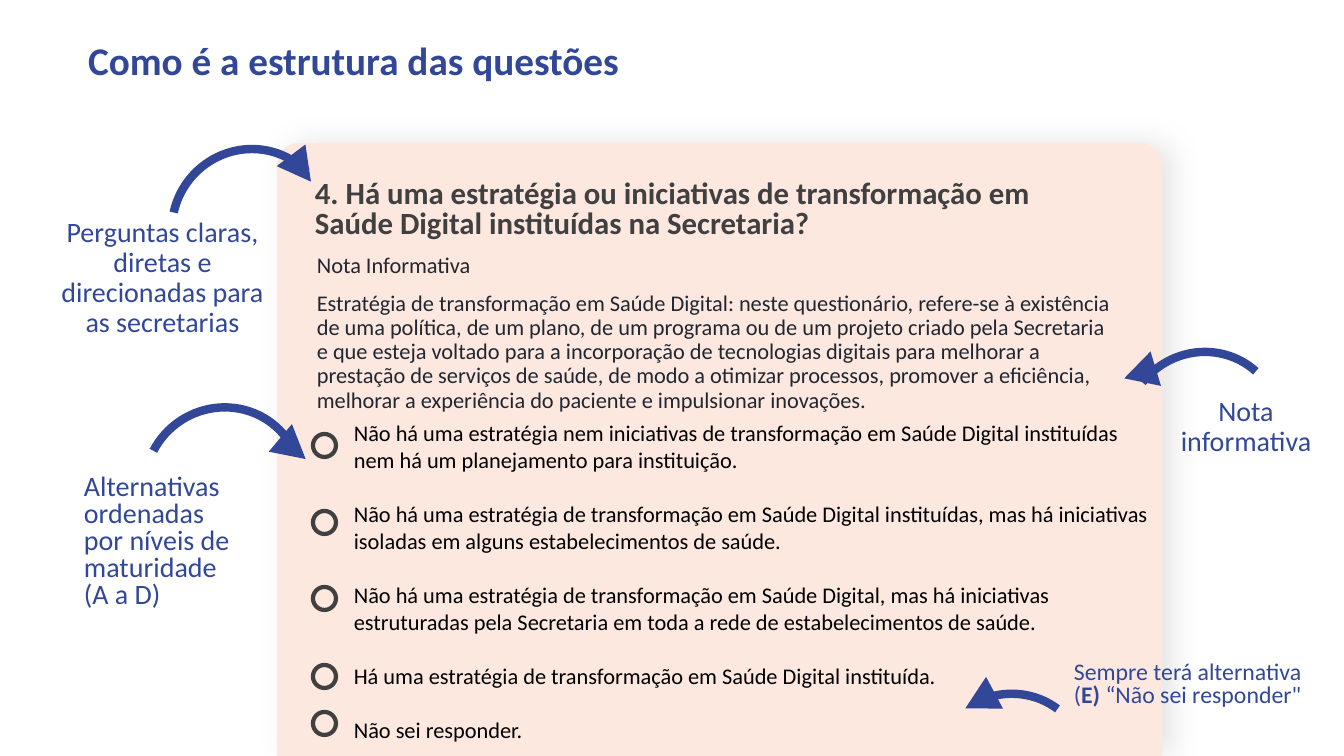
from lxml import etree
from pptx import Presentation
from pptx import util as u
from pptx.dml.color import RGBColor
from pptx.enum import shapes, text
from pptx.oxml.ns import qn

BLUE, PEACH, GREY, INK, BLACK = "324798", "FCE8DF", "404040", "212730", "000000"
FONT = "Calibri"
SLIDE = (1344, 756)
CARD = (277, 143, 885, 613)
TITLE = ((78, 36, 675, 53), "Como é a estrutura das questões")
OPTIONS = [
    "Não há uma estratégia nem iniciativas de transformação em Saúde Digital instituídas nem há um planejamento para instituição.",
    "Não há uma estratégia de transformação em Saúde Digital instituídas, mas há iniciativas isoladas em alguns estabelecimentos de saúde.",
    "Não há uma estratégia de transformação em Saúde Digital, mas há iniciativas estruturadas pela Secretaria em toda a rede de estabelecimentos de saúde.",
    "Há uma estratégia de transformação em Saúde Digital instituída.",
    "Não sei responder.",
]
NOTE = [
    "Nota Informativa",
    "Estratégia de transformação em Saúde Digital: neste questionário, refere-se à existência de uma política, de um plano, de um programa ou de um projeto criado pela Secretaria e que esteja voltado para a incorporação de tecnologias digitais para melhorar a prestação de serviços de saúde, de modo a otimizar processos, promover a eficiência, melhorar a experiência do paciente e impulsionar inovações.",
]
QUESTION = "4. Há uma estratégia ou iniciativas de transformação em Saúde Digital instituídas na Secretaria?"
ALWAYS = [("Sempre terá alternativa (", False), ("E) ", True), ("“Não sei responder\"", False)]
LEFT, CENTER = text.PP_ALIGN.LEFT, text.PP_ALIGN.CENTER

# box, paragraphs of (words, bold) runs, size, colour, line spacing, gap, alignment
TEXTS = [
    ((48, 213, 229, 126), [[("Perguntas claras, diretas e direcionadas para as secretarias", False)]],
     20, BLUE, 0.9, 0, CENTER),
    ((305, 176, 788, 74), [[(QUESTION, True)]], 22, GREY, 0.8, 0, LEFT),
    ((307, 249, 816, 165), [[(words, False)] for words in NOTE], 16, INK, 0.9, 10, LEFT),
    ((344, 414, 818, 295), [[(words, False)] for words in OPTIONS], 16, BLACK, 1.0, 19.5, LEFT),
    ((74, 470, 183, 155), [[("Alternativas ordenadas por níveis de maturidade (A a D)", False)]],
     20, BLUE, 0.8, 0, LEFT),
    ((1064, 657, 254, 63), [ALWAYS], 17, BLUE, 0.8, 0, LEFT),
    ((1162, 392, 168, 64), [[("Nota informativa", False)]], 20, BLUE, 0.9, 0, CENTER),
]
RING_X, RING_SIZE = 313, 23
RING_TOPS = [434, 511, 587, 665, 712]
ARC_SIZE, HEAD_SIZE = (158, 154), (36, 33)
# arc corner, arc rotation, arc start angle, head corner, head rotation
ARROWS = [
    ((171, 150), 315.9, 234.86, (283, 152), 143),
    ((1124, 353), 312, 266.18, (1122, 357), 253),
    ((144, 408), 326.7, 239.43, (275, 432), 130),
    ((931, 695), 307, 307.24, (962, 684), 242),
]


def px(n):
    return u.Emu(round(n * 914400 / 100.8))


def rgb(code):
    return RGBColor.from_string(code)


def add_shape(s, kind, box, fill=None, line=None, width=0, rotation=0):
    sp = s.shapes.add_shape(kind, *map(px, box))
    sp.shadow.inherit = False
    sp.rotation = rotation
    if fill:
        sp.fill.solid()
        sp.fill.fore_color.rgb = rgb(fill)
    else:
        sp.fill.background()
    if line:
        sp.line.color.rgb = rgb(line)
        sp.line.width = u.Pt(width)
    else:
        sp.line.fill.background()
    return sp


def write(tf, paragraphs, size, color, spacing, gap, align):
    tf.word_wrap = True
    tf.auto_size = text.MSO_AUTO_SIZE.NONE
    for i, runs in enumerate(paragraphs):
        p = tf.add_paragraph() if i else tf.paragraphs[0]
        p.alignment, p.line_spacing = align, spacing
        p.space_before = u.Pt(gap if i else 0)
        for words, bold in runs:
            r = p.add_run()
            r.text = words
            r.font.name, r.font.size, r.font.bold = FONT, u.Pt(size), bold
            r.font.color.rgb = rgb(color)


def add_card(s):
    sp = add_shape(s, shapes.MSO_SHAPE.ROUND_2_SAME_RECTANGLE, CARD, PEACH)
    sp.adjustments[0], sp.adjustments[1] = 0.036, 0
    effects = sp._element.spPr.find(qn("a:effectLst"))
    shadow = etree.SubElement(effects, qn("a:outerShdw"), blurRad=str(u.Pt(20)),
                              dist=str(u.Pt(8)), dir="0", algn="l", rotWithShape="0")
    color = etree.SubElement(shadow, qn("a:srgbClr"), val="AEAEAE")
    etree.SubElement(color, qn("a:alpha"), val="31000")


def main():
    """Build the slide that explains how each question is structured."""
    prs = Presentation()
    prs.slide_width, prs.slide_height = map(px, SLIDE)
    s = prs.slides.add_slide(prs.slide_layouts[5])

    box, words = TITLE
    title = s.shapes.title
    title.left, title.top, title.width, title.height = map(px, box)
    title.text_frame.vertical_anchor = text.MSO_ANCHOR.MIDDLE
    write(title.text_frame, [[(words, True)]], 28, BLUE, 0.9, 0, LEFT)

    add_card(s)
    for box, *style in TEXTS:
        write(s.shapes.add_textbox(*map(px, box)).text_frame, *style)
    for top in RING_TOPS:
        add_shape(s, shapes.MSO_SHAPE.OVAL, (RING_X, top, RING_SIZE, RING_SIZE), PEACH, GREY, 3)
    for corner, turn, start, head, head_turn in ARROWS:
        arc = add_shape(s, shapes.MSO_SHAPE.ARC, corner + ARC_SIZE, None, BLUE, 6, turn)
        arc.adjustments[0], arc.adjustments[1] = start * 0.6, 0
        add_shape(s, shapes.MSO_SHAPE.ISOSCELES_TRIANGLE, head + HEAD_SIZE, BLUE, rotation=head_turn)

    prs.save("out.pptx")


if __name__ == "__main__":
    main()
